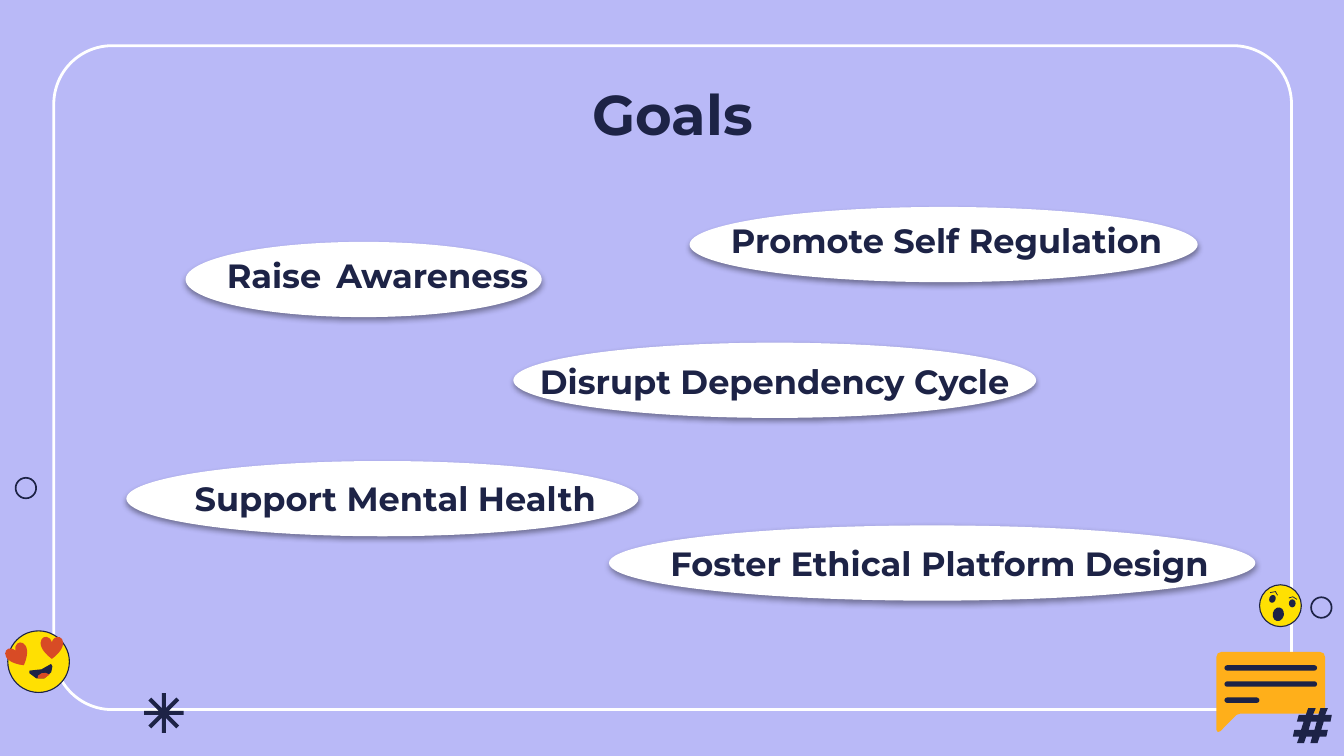
import math
from lxml import etree
from pptx import Presentation
from pptx.dml.color import RGBColor
from pptx.enum.shapes import MSO_SHAPE
from pptx.enum.text import MSO_ANCHOR, PP_ALIGN
from pptx.oxml import parse_xml
from pptx.util import Pt

OVAL, ROUND, HEART = MSO_SHAPE.OVAL, MSO_SHAPE.ROUNDED_RECTANGLE, MSO_SHAPE.HEART
LEFT, CENTER, JUSTIFY = PP_ALIGN.LEFT, PP_ALIGN.CENTER, PP_ALIGN.JUSTIFY
TOP, MIDDLE = MSO_ANCHOR.TOP, MSO_ANCHOR.MIDDLE
NAVY, WHITE, LILAC = "1D2346", "FFFFFF", "B9B9F7"
YELLOW, ORANGE, RED = "FFE002", "FFAF1A", "D84B25"
NS = "http://schemas.openxmlformats.org/drawingml/2006/main"
SHADOW = (f'<a:effectLst xmlns:a="{NS}"><a:outerShdw blurRad="39400" dist="20300" '
          'dir="5400000" algn="bl" rotWithShape="0"><a:srgbClr val="000000">'
          '<a:alpha val="38000"/></a:srgbClr></a:outerShdw></a:effectLst>')

prs = Presentation()
prs.slide_width, prs.slide_height = Pt(720), Pt(405)
s = prs.slides.add_slide(prs.slide_layouts[6])
s.background.fill.solid()
s.background.fill.fore_color.rgb = RGBColor.from_string(LILAC)


def paint(sp, fill=None, line=None, width=1):
    """Set fill and line, or turn them off, and drop the shadow."""
    sp.shadow.inherit = False
    if fill:
        sp.fill.solid()
        sp.fill.fore_color.rgb = RGBColor.from_string(fill)
    else:
        sp.fill.background()
    if line:
        sp.line.color.rgb = RGBColor.from_string(line)
        sp.line.width = Pt(width)
    else:
        sp.line.fill.background()
    return sp


def outline(*contours, close=True):
    """Freeform from one or more lists of points."""
    fb = None
    for pts in contours:
        pts = [(Pt(x), Pt(y)) for x, y in pts]
        if fb is None:
            fb = s.shapes.build_freeform(*pts[0], scale=1.0)
        else:
            fb.move_to(*pts[0])
        fb.add_line_segments(pts[1:], close=close)
    return fb.convert_to_shape()


# Frame
sp = s.shapes.add_shape(ROUND, Pt(28.8), Pt(24.5), Pt(663.1), Pt(355.7))
sp.adjustments[0] = 0.088
paint(sp, line=WHITE, width=1.5)

# Round parts of both faces, and the two rings
for x, y, w, h, turn, fill, line, width in [
    (4.2, 338, 33, 33, 0, YELLOW, NAVY, 0.6),
    (674.8, 313.3, 22.4, 22.4, 0, YELLOW, NAVY, 0.6),
    (681.8, 325.4, 6, 7.4, 12, NAVY, None, 0),
    (690.5, 321.1, 3.6, 4.3, 0, NAVY, None, 0),
    (680, 318.7, 3.4, 4.3, 20, NAVY, None, 0),
    (702.4, 320, 11, 11, 0, None, NAVY, 0.9),
    (8.4, 256, 11, 11, 0, None, NAVY, 0.9),
]:
    sp = s.shapes.add_shape(OVAL, Pt(x), Pt(y), Pt(w), Pt(h))
    sp.rotation = turn
    paint(sp, fill, line, width)

# Heart eyes, mouth and tongue
for x, y, turn in [(3.8, 345.2, -30), (21.8, 341, 0)]:
    sp = s.shapes.add_shape(HEART, Pt(x), Pt(y), Pt(12), Pt(12))
    sp.rotation = turn
    paint(sp, RED)
paint(outline([(15.8, 359.3), (22.3, 358.6), (27.4, 355.7), (28.1, 357.1),
               (27.5, 360.2), (23.8, 363.4), (19.4, 363.4), (15.8, 360.7)]), NAVY)
paint(outline([(20.2, 363.4), (20.4, 362), (22.3, 360.7), (24.5, 360.5),
               (26.6, 361.4), (23.8, 363.4)]), RED)

# Eyebrows of the surprised face
for pts in [[(690.5, 320.4), (692.6, 319.7), (694.8, 321.1)],
            [(680.4, 317.5), (683.3, 316.9), (684.4, 318.9)]]:
    paint(outline(pts, close=False), line=NAVY, width=0.4)

# Speech bubble with its lines
paint(outline([(651.6, 352.1), (652.4, 350), (654.5, 349.2), (707, 349.2), (709.1, 350),
               (709.9, 352.1), (709.9, 379.4), (709.1, 381.5), (707, 382.3),
               (664.6, 382.3), (662.4, 383), (653.8, 391.7), (652.4, 392.2),
               (651.6, 391)]), ORANGE)
for i, w in enumerate([49.6, 49.6, 18.7]):
    sp = s.shapes.add_shape(ROUND, Pt(656), Pt(356.4 + 8.64 * i), Pt(w), Pt(2.9))
    sp.adjustments[0] = 0.5
    paint(sp, NAVY)

# Hash sign
paint(outline(
    [(712.8, 386.6), (713.5, 383), (709.9, 383), (711.4, 379.4), (707.4, 379.4),
     (706.3, 383), (703.4, 383), (704.9, 379.4), (700.8, 379.4), (699.6, 383),
     (695.8, 383), (694.8, 386.6), (698.4, 386.6), (697, 391), (693.4, 391),
     (692.6, 394.6), (696.1, 394.6), (694.8, 398.2), (698.6, 398.2), (699.8, 394.6),
     (703, 394.6), (702, 398.2), (705.8, 398.2), (707, 394.6), (710.6, 394.6),
     (711.4, 391), (707.8, 391), (709.2, 386.6)],
    [(704.2, 391), (701.1, 391), (702.3, 386.6), (705.4, 386.6)]), NAVY)

# Eight-armed asterisk
arm, half = 10.6, 1.1
notch = half / math.sin(math.pi / 8)
star = []
for i in range(8):
    a = i * math.pi / 4
    for along, across in [(arm, -half), (arm, half)]:
        star.append((87.8 + along * math.cos(a) - across * math.sin(a),
                     382 + along * math.sin(a) + across * math.cos(a)))
    a += math.pi / 8
    star.append((87.8 + notch * math.cos(a), 382 + notch * math.sin(a)))
paint(outline(star), NAVY)

# Goal ellipses
for x, y, w in [(326.2, 281.5, 346.3), (67.7, 247, 274.3), (275, 183.6, 280.1),
                (369.4, 110.9, 272.2), (99.4, 129.6, 190.8)]:
    sp = paint(s.shapes.add_shape(OVAL, Pt(x), Pt(y), Pt(w), Pt(40.3)), WHITE)
    spPr = sp._element.spPr
    spPr.replace(spPr.find(etree.QName(NS, "effectLst").text), parse_xml(SHADOW))

# Title and goal texts
for text, x, y, w, h, size, align, anchor, inset in [
    ("Goals", 56.9, 35.3, 607, 45.4, 30, CENTER, TOP, 7.2),
    ("Raise Awareness ", 114.5, 131, 175.7, 33.1, 18, JUSTIFY, MIDDLE, 7.2),
    ("Promote Self Regulation", 384.5, 114.5, 257.8, 28.8, 18, LEFT, TOP, 3.6),
    ("Disrupt Dependency Cycle", 282.2, 190.1, 272.2, 28.8, 18, LEFT, TOP, 3.6),
    ("Support Mental Health", 97.2, 252.4, 237.6, 28.8, 18, LEFT, TOP, 3.6),
    ("Foster Ethical Platform Design", 352.1, 287.1, 310.3, 28.8, 18, LEFT, TOP, 3.6),
]:
    tf = s.shapes.add_textbox(Pt(x), Pt(y), Pt(w), Pt(h)).text_frame
    tf.word_wrap = True
    tf.vertical_anchor = anchor
    tf.margin_left = tf.margin_right = Pt(7.2)
    tf.margin_top = tf.margin_bottom = Pt(inset)
    p = tf.paragraphs[0]
    p.alignment = align
    r = p.add_run()
    r.text = text
    r.font.name, r.font.size, r.font.bold = "Montserrat", Pt(size), True
    r.font.color.rgb = RGBColor.from_string(NAVY)

prs.save("out.pptx")
